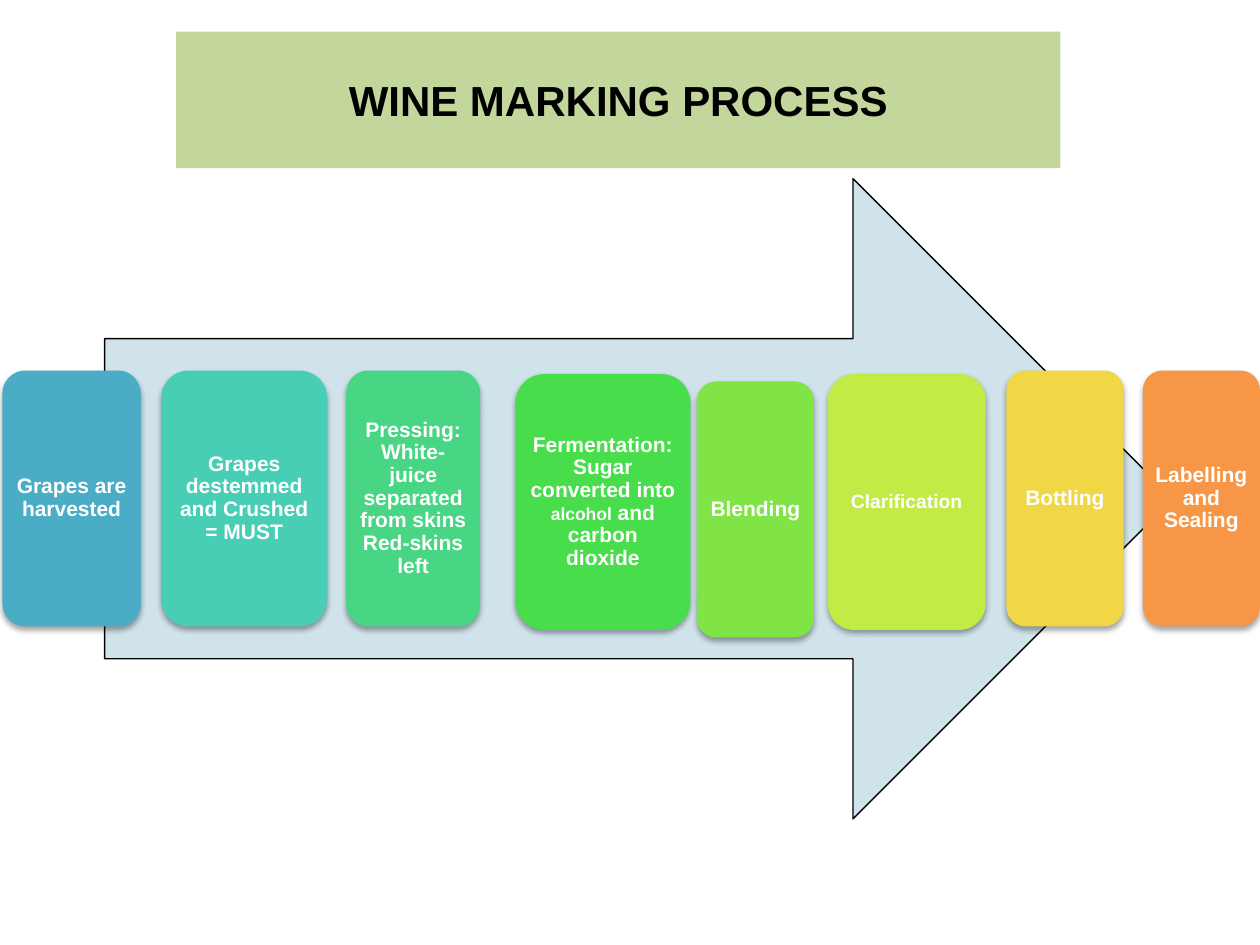
from dataclasses import dataclass

from lxml import etree
from pptx import Presentation
from pptx.dml.color import RGBColor
from pptx.enum.shapes import MSO_SHAPE
from pptx.enum.text import MSO_ANCHOR, PP_ALIGN
from pptx.oxml.ns import qn
from pptx.util import Cm, Pt

RECTANGLE = MSO_SHAPE.RECTANGLE
ROUNDED = MSO_SHAPE.ROUNDED_RECTANGLE
RIGHT_ARROW = MSO_SHAPE.RIGHT_ARROW
MIDDLE = MSO_ANCHOR.MIDDLE
CENTER = PP_ALIGN.CENTER

BLACK = RGBColor(0x00, 0x00, 0x00)
WHITE = RGBColor(0xFF, 0xFF, 0xFF)
SAGE = RGBColor(0xC3, 0xD6, 0x9B)
PALE_BLUE = RGBColor(0xD0, 0xE3, 0xEA)
BLUE = RGBColor(0x4B, 0xAC, 0xC6)
TURQUOISE = RGBColor(0x49, 0xCE, 0xB6)
SEA_GREEN = RGBColor(0x48, 0xD6, 0x84)
GREEN = RGBColor(0x47, 0xDD, 0x4B)
LIGHT_GREEN = RGBColor(0x80, 0xE4, 0x46)
LIME = RGBColor(0xC3, 0xEB, 0x46)
YELLOW = RGBColor(0xF1, 0xD7, 0x46)
ORANGE = RGBColor(0xF7, 0x96, 0x46)

FONT = "Arial"
STEP_TOP = 7.47
STEP_HEIGHT = 5.16
STEP_INSET = Cm(0.13)


@dataclass
class Run:
    text: str
    size: float = 12


@dataclass
class Step:
    left: float
    width: float
    color: RGBColor
    runs: list[Run]
    drop: float = 0  # distance below the common top


STEPS = [
    Step(0.05, 2.79, BLUE, [Run("Grapes are harvested")]),
    Step(3.25, 3.35, TURQUOISE, [Run("Grapes destemmed and Crushed = MUST")]),
    Step(6.98, 2.7, SEA_GREEN,
         [Run("Pressing: White-juice separated from skins Red-skins left")]),
    Step(10.39, 3.53, GREEN,
         [Run("Fermentation: Sugar converted into "), Run("alcohol", 10),
          Run(" and carbon dioxide")], 0.07),
    Step(14.05, 2.36, LIGHT_GREEN, [Run("Blending")], 0.22),
    Step(16.69, 3.18, LIME, [Run("Clarification", 11)], 0.07),
    Step(20.29, 2.36, YELLOW, [Run("Bottling")]),
    Step(23.04, 2.36, ORANGE, [Run("Labelling and Sealing")]),
]


def add_block(slide, kind, left: float, top: float, width: float,
              height: float, color: RGBColor):
    block = slide.shapes.add_shape(kind, Cm(left), Cm(top), Cm(width), Cm(height))
    block.shadow.inherit = False
    block.fill.solid()
    block.fill.fore_color.rgb = color
    block.line.fill.background()
    return block


def write(block, runs: list[Run], color: RGBColor):
    frame = block.text_frame
    frame.word_wrap = True
    frame.vertical_anchor = MIDDLE
    paragraph = frame.paragraphs[0]
    paragraph.alignment = CENTER
    for part in runs:
        run = paragraph.add_run()
        run.text = part.text
        run.font.name = FONT
        run.font.size = Pt(part.size)
        run.font.bold = True
        run.font.color.rgb = color
    return frame


def add_soft_shadow(block) -> None:
    effects = block._element.spPr.find(qn("a:effectLst"))
    shadow = etree.SubElement(effects, qn("a:outerShdw"), blurRad="40000",
                              dist="23000", dir="5400000", rotWithShape="0")
    tint = etree.SubElement(shadow, qn("a:srgbClr"), val="000000")
    etree.SubElement(tint, qn("a:alpha"), val="35000")


def add_step(slide, step: Step) -> None:
    card = add_block(slide, ROUNDED, step.left, STEP_TOP + step.drop,
                     step.width, STEP_HEIGHT, step.color)
    add_soft_shadow(card)
    frame = write(card, step.runs, WHITE)
    frame.margin_left = frame.margin_right = STEP_INSET
    frame.margin_top = frame.margin_bottom = STEP_INSET
    frame.paragraphs[0].line_spacing = 0.9


def main() -> None:
    prs = Presentation()
    prs.slide_width, prs.slide_height = Cm(25.4), Cm(19.05)
    slide = prs.slides.add_slide(prs.slide_layouts[6])

    # Title banner
    banner = add_block(slide, RECTANGLE, 3.55, 0.64, 17.83, 2.75, SAGE)
    write(banner, [Run("WINE MARKING PROCESS", 24)], BLACK)

    # Arrow behind the steps
    arrow = add_block(slide, RIGHT_ARROW, 2.11, 3.6, 21.54, 12.91, PALE_BLUE)
    arrow.line.color.rgb = BLACK
    arrow.line.width = Pt(0.75)

    # Process steps
    for step in STEPS:
        add_step(slide, step)

    prs.save("out.pptx")


if __name__ == "__main__":
    main()
